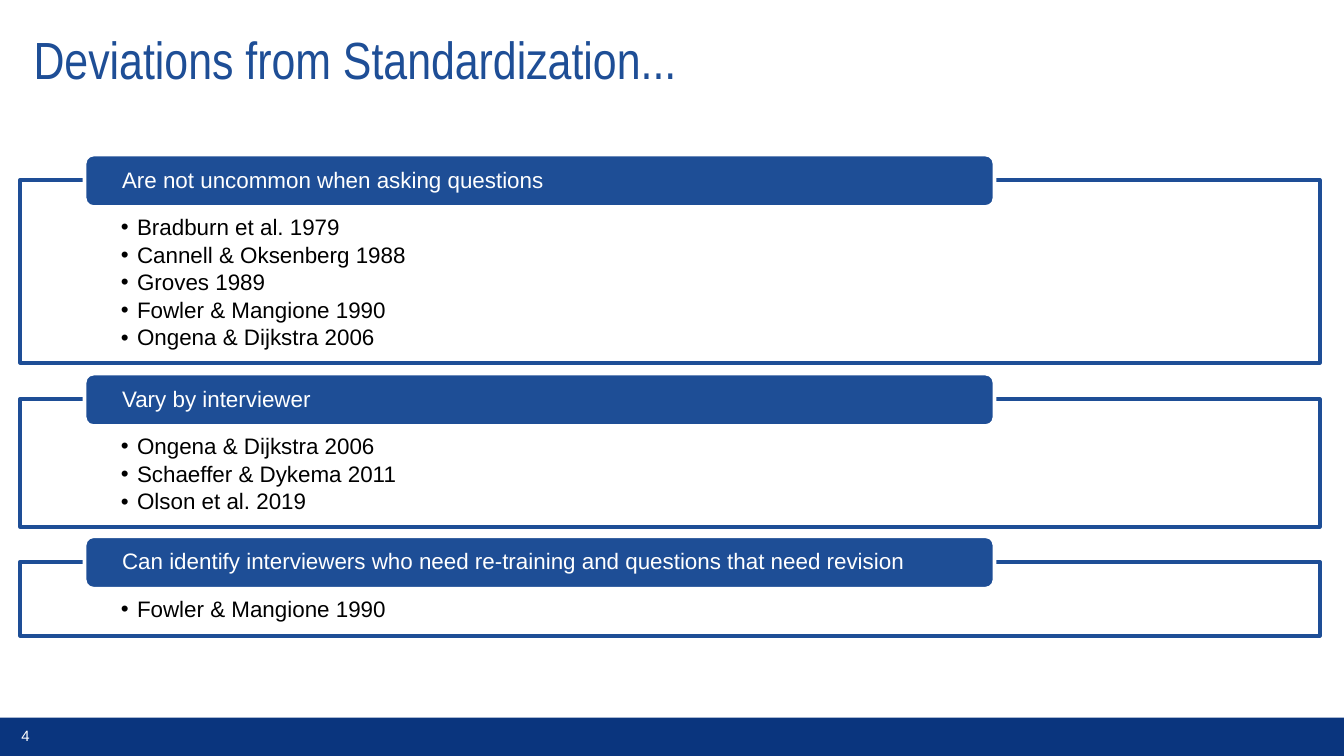
from lxml import etree
from pptx import Presentation, util as u
from pptx.dml.color import RGBColor
from pptx.enum import shapes, text
from pptx.oxml.ns import qn

BLUE = RGBColor(0x1E, 0x4E, 0x96)
NAVY = RGBColor(0x0A, 0x35, 0x7E)
WHITE = RGBColor(0xFF, 0xFF, 0xFF)
BLACK = RGBColor(0, 0, 0)

SECTIONS = [
    (1.34, 1.36, "Are not uncommon when asking questions",
     ["Bradburn et al. 1979", "Cannell & Oksenberg 1988", "Groves 1989",
      "Fowler & Mangione 1990", "Ongena & Dijkstra 2006"]),
    (2.97, 0.95, "Vary by interviewer",
     ["Ongena & Dijkstra 2006", "Schaeffer & Dykema 2011", "Olson et al. 2019"]),
    (4.18, 0.55,
     "Can identify interviewers who need re-training and questions that need revision",
     ["Fowler & Mangione 1990"]),
]


def add_block(page, kind, place, fill, line=None):
    block = page.shapes.add_shape(kind, *map(u.Inches, place))
    block.shadow.inherit = False
    block.fill.solid()
    block.fill.fore_color.rgb = fill
    if line is None:
        block.line.fill.background()
    else:
        block.line.color.rgb = line
        block.line.width = u.Pt(2)
    return block


def set_frame(box, insets, anchor):
    frame = box.text_frame
    frame.word_wrap = True
    frame.auto_size = text.MSO_AUTO_SIZE.NONE
    frame.vertical_anchor = anchor
    (frame.margin_left, frame.margin_top,
     frame.margin_right, frame.margin_bottom) = map(u.Inches, insets)
    return frame


def write(para, words, size, color, font="Arial", align=text.PP_ALIGN.LEFT):
    para.alignment = align
    para.line_spacing = 0.9
    span = para.add_run()
    span.text = words
    span.font.size = u.Pt(size)
    span.font.name = font
    span.font.color.rgb = color


def add_bullet(para):
    properties = para._p.get_or_add_pPr()
    properties.set("marL", str(u.Inches(0.12)))
    properties.set("indent", str(-u.Inches(0.12)))
    etree.SubElement(properties, qn("a:buFont")).set("typeface", "Arial")
    etree.SubElement(properties, qn("a:buChar")).set("char", "•")


def add_title(page, words):
    title = page.shapes.title
    title.left, title.top, title.width, title.height = map(
        u.Inches, (0.15, 0.15, 9.67, 0.63))
    frame = set_frame(title, (0.1, 0.1, 0.2, 0.1), text.MSO_ANCHOR.MIDDLE)
    write(frame.paragraphs[0], words, 28, BLUE, "Arial Narrow")


def add_section(page, top, height, heading, sources):
    panel = add_block(page, shapes.MSO_SHAPE.RECTANGLE,
                      (0.15, top, 9.67, height), WHITE, BLUE)
    color = panel.fill._xPr.find(qn("a:solidFill"))[0]
    etree.SubElement(color, qn("a:alpha")).set("val", "90000")
    frame = set_frame(panel, (0.75, 0.27, 0.75, 0.09), text.MSO_ANCHOR.TOP)
    for index, source in enumerate(sources):
        para = frame.add_paragraph() if index else frame.paragraphs[0]
        write(para, source, 12, BLACK)
        para.space_after = u.Pt(1.8)
        add_bullet(para)

    header = add_block(page, shapes.MSO_SHAPE.ROUNDED_RECTANGLE,
                       (0.63, top - 0.19, 6.77, 0.39), BLUE, WHITE)
    frame = set_frame(header, (0.26, 0, 0.26, 0), text.MSO_ANCHOR.MIDDLE)
    write(frame.paragraphs[0], heading, 12, WHITE)


def add_footer(page, number):
    add_block(page, shapes.MSO_SHAPE.RECTANGLE, (0, 5.34, 10, 0.29), NAVY)
    box = page.shapes.add_textbox(*map(u.Inches, (0, 5.36, 0.38, 0.24)))
    frame = set_frame(box, (0.1, 0.05, 0.1, 0.05), text.MSO_ANCHOR.MIDDLE)
    write(frame.paragraphs[0], number, 8, WHITE, align=text.PP_ALIGN.CENTER)


def main():
    deck = Presentation()
    deck.slide_width = u.Inches(10)
    deck.slide_height = deck.slide_width * 9 // 16
    page = deck.slides.add_slide(deck.slide_layouts[5])
    add_title(page, "Deviations from Standardization...")
    for section in SECTIONS:
        add_section(page, *section)
    add_footer(page, "4")
    deck.save("out.pptx")


if __name__ == "__main__":
    main()
